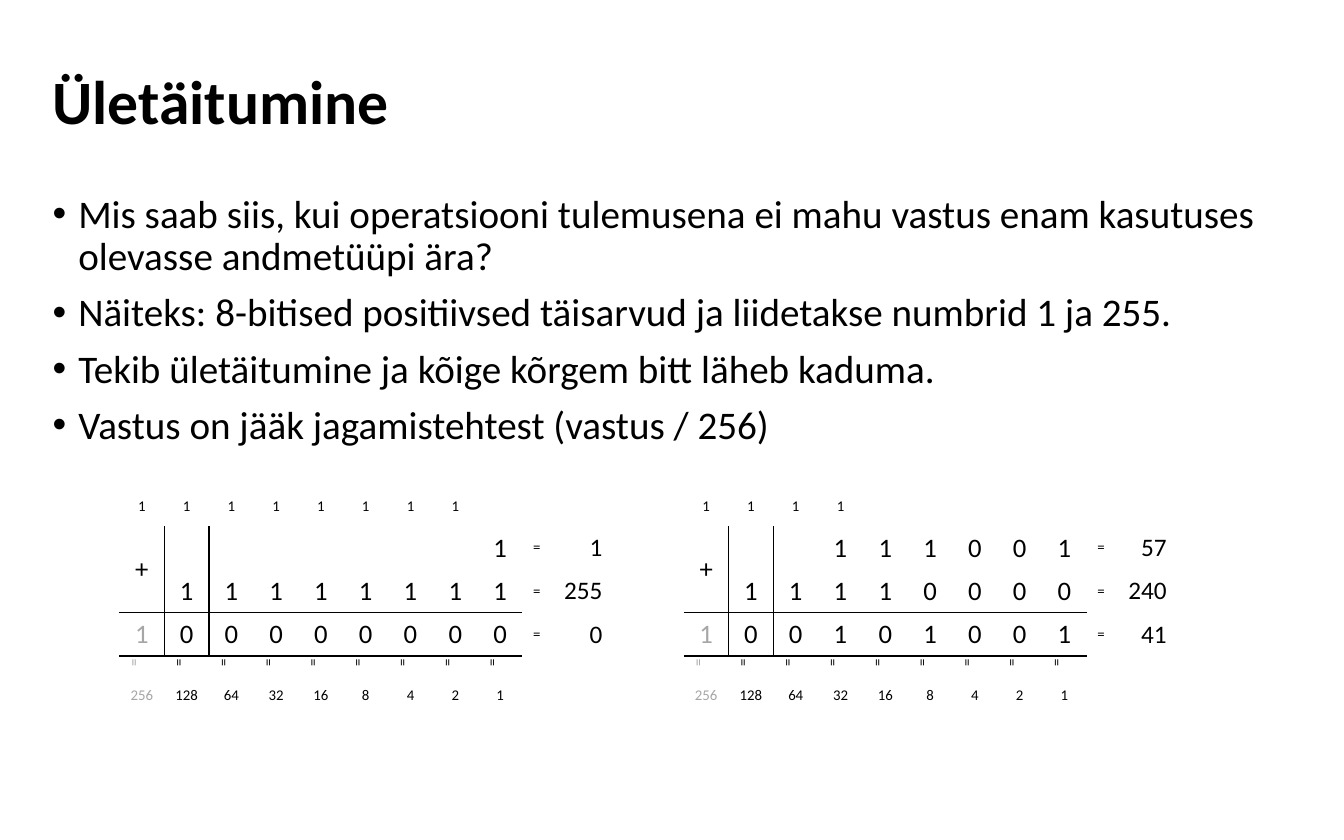
from lxml import etree
from pptx import Presentation
from pptx.dml.color import RGBColor
from pptx.enum.text import MSO_ANCHOR, MSO_AUTO_SIZE, PP_ALIGN
from pptx.oxml.ns import qn
from pptx.util import Pt

BLACK = RGBColor(0x00, 0x00, 0x00)
GREY = RGBColor(0xA6, 0xA6, 0xA6)
LEFT, CENTER, RIGHT = PP_ALIGN.LEFT, PP_ALIGN.CENTER, PP_ALIGN.RIGHT
MIDDLE, TOP = MSO_ANCHOR.MIDDLE, MSO_ANCHOR.TOP
NO_AUTOFIT = MSO_AUTO_SIZE.NONE
FONT = "Calibri"
PLAIN_TABLE_STYLE = "{2D5ABB26-0587-4C30-8999-92F81FD0307C}"
BITS = 8
PLACES = BITS + 1
SMALL, DIGIT, DECIMAL = 10, 18, 17
COLUMN_WIDTHS = [30.24] * PLACES + [16.56, 43.92]
ROW_HEIGHTS = [26.64] * 4 + [12.96, 26.64]
CARRY_ROW, FIRST_ROW, SECOND_ROW, TOTAL_ROW, EQUALS_ROW, WEIGHT_ROW = range(6)
POINTS = [
    "Mis saab siis, kui operatsiooni tulemusena ei mahu vastus enam kasutuses olevasse andmetüüpi ära?",
    "Näiteks: 8-bitised positiivsed täisarvud ja liidetakse numbrid 1 ja 255.",
    "Tekib ületäitumine ja kõige kõrgem bitt läheb kaduma.",
    "Vastus on jääk jagamistehtest (vastus / 256)",
]


def write_text(paragraph, text, size, color=BLACK, bold=False, align=LEFT):
    """Write one formatted run, or size the paragraph when it is empty."""
    paragraph.alignment = align
    if not text:
        paragraph._p.get_or_add_endParaRPr().set("sz", str(size * 100))
        return
    run = paragraph.add_run()
    run.text = text
    run.font.name = FONT
    run.font.size = Pt(size)
    run.font.bold = bold
    run.font.color.rgb = color


def place(placeholder, box, anchor):
    """Move a placeholder to its box and return its text frame."""
    placeholder.left, placeholder.top, placeholder.width, placeholder.height = map(Pt, box)
    frame = placeholder.text_frame
    frame.word_wrap = True
    frame.auto_size = NO_AUTOFIT
    frame.vertical_anchor = anchor
    return frame


def add_title(slide, box, title):
    """Fill the title placeholder."""
    heading = place(slide.shapes.title, box, MIDDLE).paragraphs[0]
    heading.line_spacing = 0.9
    write_text(heading, title, 41.6, bold=True)


def add_points(slide, box, points):
    """Fill the body placeholder with a bulleted list."""
    body = place(slide.placeholders[1], box, TOP)
    for index, point in enumerate(points):
        item = body.add_paragraph() if index else body.paragraphs[0]
        item.line_spacing = 0.9
        item.space_before = Pt(9.4)
        properties = item._p.get_or_add_pPr()
        properties.set("marL", str(Pt(17.28)))
        properties.set("indent", str(-Pt(17.28)))
        write_text(item, point, 26.46)


def addition_rows(first, second):
    """Work out the carries, operands, wrapped total and place values."""
    total = first + second
    weights = [2 ** power for power in reversed(range(PLACES))]
    carries = ["1" if weight > 1 and first % weight + second % weight >= weight else ""
               for weight in weights]
    rows = [carries + ["", ""]]
    for binary, decimal in ((first, first), (second, second), (total, total % 2 ** BITS)):
        digits = [digit.strip() for digit in f"{binary:b}".rjust(PLACES)]
        rows.append(digits + ["=", str(decimal)])
    rows[FIRST_ROW][0] = "+"
    rows.append(["="] * PLACES + ["", ""])
    rows.append([str(weight) for weight in weights] + ["", ""])
    return rows


def border_sides(row, column):
    """Return the ruled sides of a cell in schema order."""
    in_sum = FIRST_ROW <= row <= TOTAL_ROW and column < PLACES
    if not in_sum:
        return []
    ruled = {
        "L": column == 1,
        "R": column == 0,
        "T": row == TOTAL_ROW,
        "B": row == SECOND_ROW or (row == FIRST_ROW and column == 0),
    }
    return [side for side, shown in ruled.items() if shown]


def add_border(cell, side):
    """Rule one side of a cell."""
    line = etree.SubElement(cell._tc.get_or_add_tcPr(), qn(f"a:ln{side}"), w=str(Pt(1)))
    fill = etree.SubElement(line, qn("a:solidFill"))
    etree.SubElement(fill, qn("a:srgbClr"), val=str(BLACK))


def text_size(row, column):
    """Return the text size for a cell's role."""
    if row in (CARRY_ROW, EQUALS_ROW, WEIGHT_ROW) or column == PLACES:
        return SMALL
    return DIGIT if column < PLACES else DECIMAL


def add_addition(slide, box, first, second):
    """Draw a binary addition as a table."""
    table = slide.shapes.add_table(len(ROW_HEIGHTS), len(COLUMN_WIDTHS), *map(Pt, box)).table
    table.first_row = table.horz_banding = False
    table._tbl.tblPr.find(qn("a:tableStyleId")).text = PLAIN_TABLE_STYLE
    for column, width in zip(table.columns, COLUMN_WIDTHS):
        column.width = Pt(width)
    for row, height in zip(table.rows, ROW_HEIGHTS):
        row.height = Pt(height)
    table.cell(FIRST_ROW, 0).merge(table.cell(SECOND_ROW, 0))
    for row, values in enumerate(addition_rows(first, second)):
        for column, value in enumerate(values):
            cell = table.cell(row, column)
            cell.vertical_anchor = MIDDLE
            for side in border_sides(row, column):
                add_border(cell, side)
            cell.fill.background()
            if row == EQUALS_ROW:
                cell._tc.get_or_add_tcPr().set("vert", "vert270")
            write_text(cell.text_frame.paragraphs[0], value, text_size(row, column),
                       color=GREY if column == 0 and row >= TOTAL_ROW else BLACK,
                       align=RIGHT if column > PLACES else CENTER)


def main():
    """Build and save the slide."""
    deck = Presentation()
    deck.slide_width, deck.slide_height = Pt(907.09), Pt(566.93)
    slide = deck.slides.add_slide(deck.slide_layouts[1])
    add_title(slide, (28.35, 28.35, 850.39, 85.04), "Ületäitumine")
    add_points(slide, (28.35, 127.56, 850.39, 382.68), POINTS)
    for left, first, second in ((80.64, 1, 255), (461.52, 57, 240)):
        add_addition(slide, (left, 328.6, sum(COLUMN_WIDTHS), sum(ROW_HEIGHTS)), first, second)
    deck.save("out.pptx")


if __name__ == "__main__":
    main()
